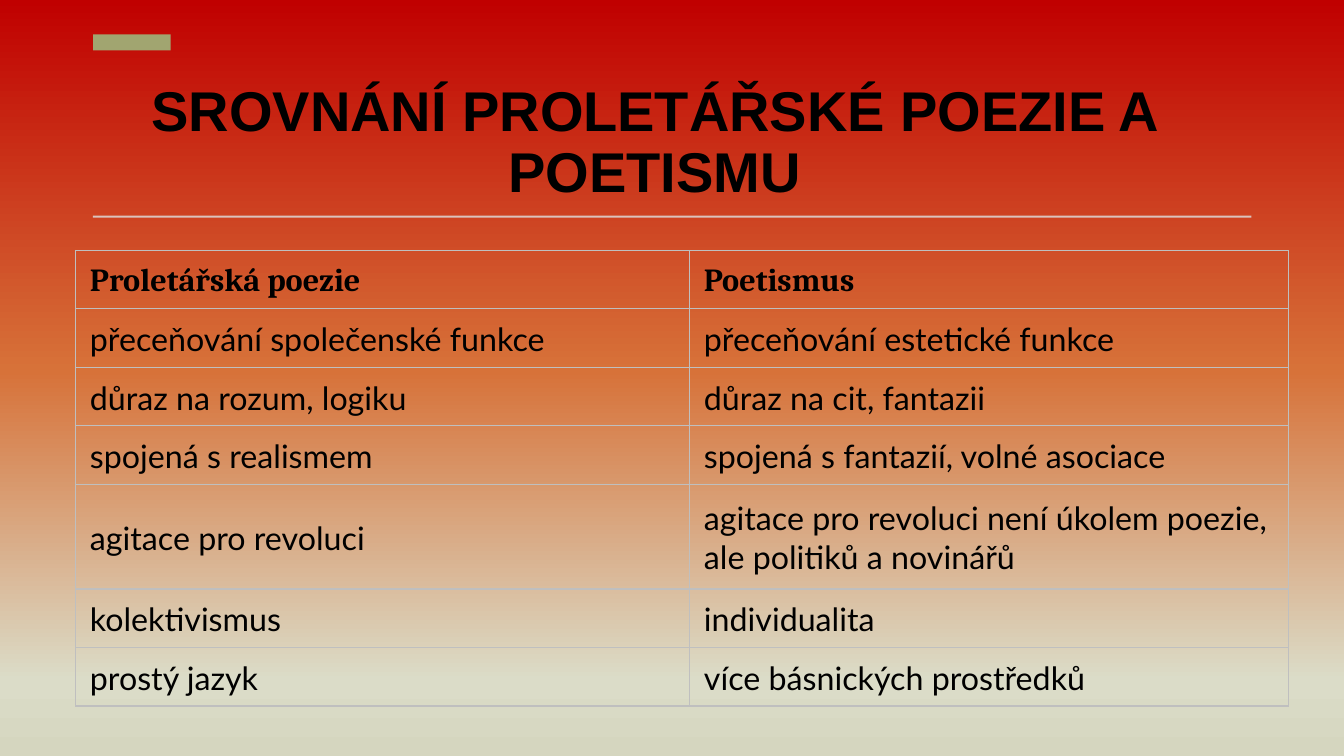
from dataclasses import dataclass

from lxml.etree import SubElement
from pptx import Presentation
from pptx.dml.color import RGBColor
from pptx.enum.shapes import MSO_SHAPE
from pptx.enum.text import MSO_ANCHOR, PP_ALIGN
from pptx.oxml import parse_xml
from pptx.oxml.ns import nsdecls, qn
from pptx.util import Inches, Pt


@dataclass(frozen=True)
class Theme:
    gradient: tuple = ((0, "C00000"), (49, "D77239"), (90, "DBDCC8"), (100, "D5D6BF"))
    ink: str = "000000"
    marker: str = "A1A570"
    rule: str = "DBC3BD"
    border: str = "BFBFBF"
    border_points: float = 1
    title_font: str = "Arial"
    header_font: str = "Cambria"
    body_font: str = "Lato"
    title_size: float = 40
    table_size: float = 23


class SlideBuilder:
    COLUMNS = 160
    ROWS = 90

    def __init__(self, deck, theme):
        self.theme = theme
        self.slide = deck.slides.add_slide(deck.slide_layouts[6])
        self.column = deck.slide_width / self.COLUMNS
        self.row = deck.slide_height / self.ROWS

    def across(self, columns):
        return round(columns * self.column)

    def down(self, rows):
        return round(rows * self.row)

    def place(self, left, top, width, height):
        return self.across(left), self.down(top), self.across(width), self.down(height)

    def shade(self, fill, element):
        fill.gradient()
        fill.gradient_angle = 270
        stops = next(element.iter(qn("a:gsLst")))
        stops.clear()
        for percent, color in self.theme.gradient:
            stop = SubElement(stops, qn("a:gs"), pos=str(percent * 1000))
            SubElement(stop, qn("a:srgbClr"), val=color)

    def rectangle(self, left, top, width, height):
        shape = self.slide.shapes.add_shape(
            MSO_SHAPE.RECTANGLE, *self.place(left, top, width, height))
        shape.shadow.inherit = False
        shape.line.fill.background()
        return shape

    def backdrop(self):
        self.shade(self.slide.background.fill, self.slide.element)
        panel = self.rectangle(0, 0, self.COLUMNS, self.ROWS)
        self.shade(panel.fill, panel.element)

    def bar(self, left, top, width, height, color):
        shape = self.rectangle(left, top, width, height)
        shape.fill.solid()
        shape.fill.fore_color.rgb = RGBColor.from_string(color)

    def style(self, para, font, size, bold):
        para.font.name = font
        para.font.size = Pt(size)
        para.font.bold = bold
        para.font.color.rgb = RGBColor.from_string(self.theme.ink)

    def title(self, text, left, top, width, height):
        box = self.slide.shapes.add_textbox(*self.place(left, top, width, height))
        frame = box.text_frame
        frame.word_wrap = True
        frame.vertical_anchor = MSO_ANCHOR.BOTTOM
        frame.margin_top = frame.margin_bottom = 0
        para = frame.paragraphs[0]
        para.text = text
        para.alignment = PP_ALIGN.CENTER
        para.line_spacing = 0.9
        self.style(para, self.theme.title_font, self.theme.title_size, True)

    def outline(self, cell):
        properties = cell._tc.get_or_add_tcPr()
        width = Pt(self.theme.border_points)
        for position, side in enumerate(("lnL", "lnR", "lnT", "lnB")):
            properties.insert(position, parse_xml(
                f'<a:{side} {nsdecls("a")} w="{width}"><a:solidFill>'
                f'<a:srgbClr val="{self.theme.border}"/></a:solidFill></a:{side}>'))

    def cell(self, cell, text, header):
        cell.fill.background()
        self.outline(cell)
        cell.vertical_anchor = MSO_ANCHOR.MIDDLE
        cell.margin_left = cell.margin_right = Inches(0.14)
        cell.margin_top = Inches(0.02)
        cell.margin_bottom = 0
        para = cell.text_frame.paragraphs[0]
        para.text = text
        font = self.theme.header_font if header else self.theme.body_font
        self.style(para, font, self.theme.table_size, header)

    def table(self, content, left, top, widths, heights):
        area = self.place(left, top, sum(widths), sum(heights))
        table = self.slide.shapes.add_table(len(content), len(widths), *area).table
        table.first_row = False
        table.horz_banding = False
        for column, width in zip(table.columns, widths):
            column.width = self.across(width)
        for index, (row, height, texts) in enumerate(zip(table.rows, heights, content)):
            row.height = self.down(height)
            for cell, text in zip(row.cells, texts):
                self.cell(cell, text, index == 0)


COMPARISON = (
    ("Proletářská poezie", "Poetismus"),
    ("přeceňování společenské funkce", "přeceňování estetické funkce"),
    ("důraz na rozum, logiku", "důraz na cit, fantazii"),
    ("spojená s realismem", "spojená s fantazií, volné asociace"),
    ("agitace pro revoluci",
     "agitace pro revoluci není úkolem poezie, ale politiků a novinářů"),
    ("kolektivismus", "individualita"),
    ("prostý jazyk", "více básnických prostředků"),
)


def main():
    deck = Presentation()
    deck.slide_width = Inches(13.33)
    deck.slide_height = Inches(7.5)
    theme = Theme()
    page = SlideBuilder(deck, theme)
    page.backdrop()
    page.title("SROVNÁNÍ PROLETÁŘSKÉ POEZIE A POETISMU", 9, 9, 137.9, 15.35)
    page.bar(11.07, 4.1, 9.24, 1.92, theme.marker)
    page.bar(11.07, 25.68, 137.9, 0.24, theme.rule)
    single, double = 6.96, 12.48
    heights = [single] * 4 + [double] + [single] * 2
    page.table(COMPARISON, 9.03, 29.81, (73.1, 71.3), heights)
    deck.save("out.pptx")


if __name__ == "__main__":
    main()
